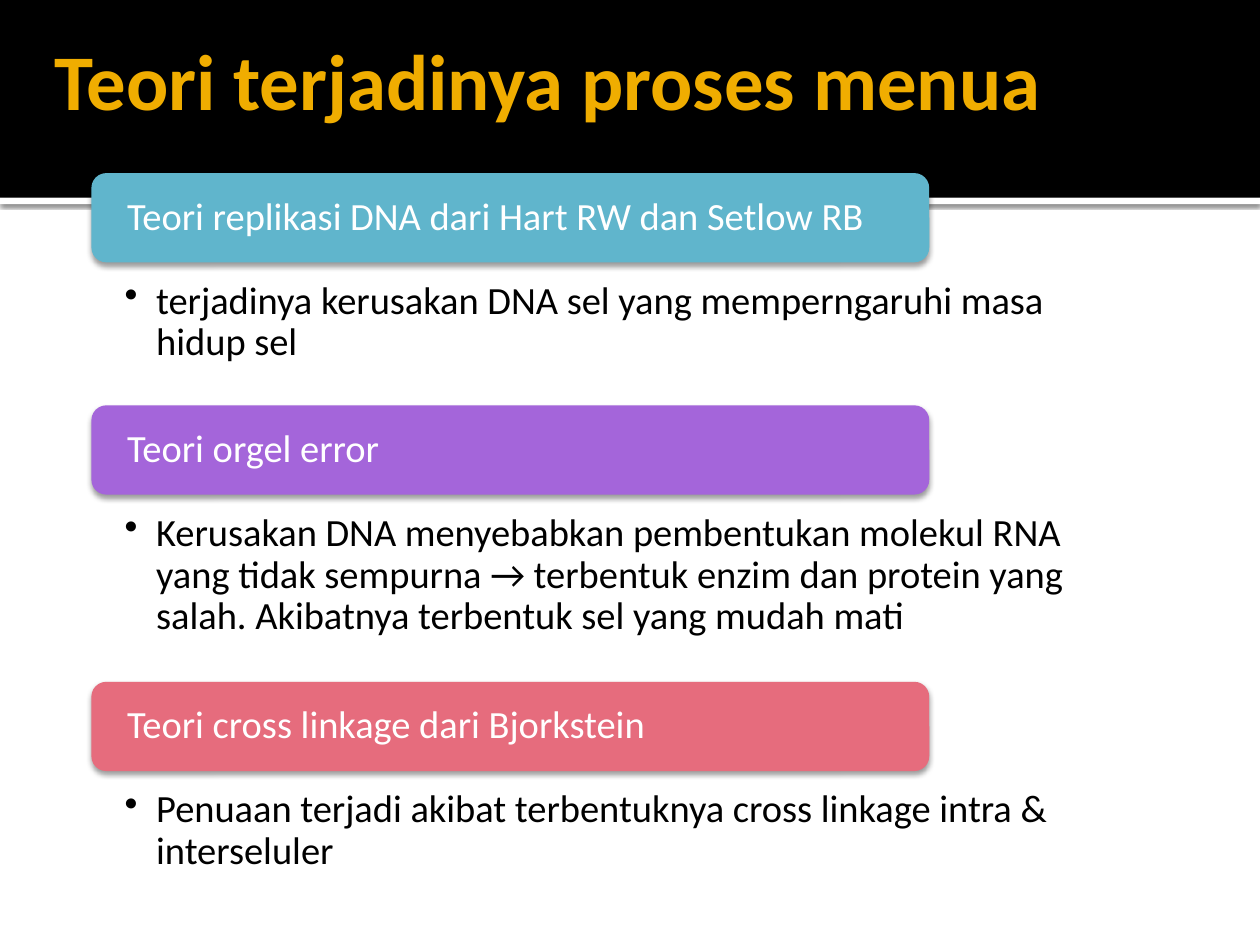
from lxml import etree
from pptx import Presentation
from pptx.dml.color import RGBColor
from pptx.enum.shapes import MSO_SHAPE
from pptx.enum.text import MSO_ANCHOR, PP_ALIGN
from pptx.oxml.ns import qn
from pptx.util import Inches, Pt

FONT = "Calibri"
COLORS = {
    "white": "FFFFFF",
    "black": "000000",
    "title": "F0AD00",
    "teal": "60B5CC",
    "purple": "A465DA",
    "rose": "E66C7D",
}
WIDTH, HEIGHT = Inches(10), Inches(7.5)
BAND_H, RULE_H = 20.93, 0.67
PANEL_X, PANEL_W, FIRST_PANEL_Y, PANEL_GAP = 2.5, 95, 23.07, 6.45
HEADER_H, HEADER_RISE = 9.45, 4.75
THEORIES = [
    ("Teori replikasi DNA dari Hart RW dan Setlow RB",
     "terjadinya kerusakan DNA sel yang memperngaruhi masa hidup sel",
     "teal", 18.13),
    ("Teori orgel error",
     "Kerusakan DNA menyebabkan pembentukan molekul RNA yang tidak sempurna → "
     "terbentuk enzim dan protein yang salah. Akibatnya terbentuk sel yang mudah mati",
     "purple", 22.8),
    ("Teori cross linkage dari Bjorkstein",
     "Penuaan terjadi akibat terbentuknya cross linkage intra & interseluler",
     "rose", 18.13),
]


def across(share):
    """Turn a percentage of the slide width into a length."""
    return int(WIDTH * share / 100)


def down(share):
    """Turn a percentage of the slide height into a length."""
    return int(HEIGHT * share / 100)


def place(box):
    """Turn a box of percentages into left, top, width and height."""
    x, y, w, h = box
    return across(x), down(y), across(w), down(h)


def add_block(s, kind, box, color):
    """Add a flat filled shape without a line."""
    sp = s.shapes.add_shape(kind, *place(box))
    sp.shadow.inherit = False
    sp.fill.solid()
    sp.fill.fore_color.rgb = RGBColor.from_string(COLORS[color])
    sp.line.fill.background()
    return sp


def add_shadow(sp, alpha, blur, dist):
    """Cast a black shadow straight down from a shape."""
    effects = sp._element.spPr.find(qn("a:effectLst"))
    shadow = etree.SubElement(effects, qn("a:outerShdw"), blurRad=str(Pt(blur)),
                              dist=str(Pt(dist)), dir="5400000",
                              algn="ctr", rotWithShape="0")
    color = etree.SubElement(shadow, qn("a:srgbClr"), val=COLORS["black"])
    etree.SubElement(color, qn("a:alpha"), val=str(alpha * 1000))


def write(sp, text, size, color, insets, anchor=MSO_ANCHOR.MIDDLE):
    """Write one left-aligned paragraph in a shape and return it."""
    tf = sp.text_frame
    tf.word_wrap = True
    tf.vertical_anchor = anchor
    tf.margin_left, tf.margin_right = (across(i) for i in insets[::2])
    tf.margin_top, tf.margin_bottom = (down(i) for i in insets[1::2])
    p = tf.paragraphs[0]
    p.text = text
    p.alignment = PP_ALIGN.LEFT
    p.font.name = FONT
    p.font.size = Pt(size)
    p.font.color.rgb = RGBColor.from_string(COLORS[color])
    return p


def add_bullet(p):
    """Give a paragraph a round bullet and a hanging indent."""
    pPr = p._p.get_or_add_pPr()
    pPr.set("marL", str(across(2.5)))
    pPr.set("indent", str(-across(2.5)))
    bullet = etree.Element(qn("a:buChar"), char="•")
    pPr.find(qn("a:defRPr")).addprevious(bullet)


def add_title_band(s, box, title):
    """Draw the dark band with its white rule and the slide title."""
    x, y, w, h = box
    rule = add_block(s, MSO_SHAPE.RECTANGLE, (x, y + h, w, RULE_H), "white")
    add_shadow(rule, 60, 2.5, 0.8)
    add_block(s, MSO_SHAPE.RECTANGLE, box, "black")
    tb = s.shapes.add_textbox(*place((x + w / 30, y, w * 0.9, h * 0.8)))
    p = write(tb, title, 45, "title", (1, 0.67, 0.5, 0.67))
    p.font.bold = True


def add_theory(s, box, name, detail, color):
    """Draw a panel of detail with its header overlapping the top edge."""
    x, y, w, h = box
    panel = add_block(s, MSO_SHAPE.RECTANGLE, box, "white")
    fill = panel._element.spPr.find(qn("a:solidFill"))
    etree.SubElement(fill[0], qn("a:alpha"), val="90000")
    p = write(panel, detail, 22, "black", (7.4, 6.67, 7.4, 2.27), MSO_ANCHOR.TOP)
    p.line_spacing = 0.9
    add_bullet(p)
    header_box = (x + w * 0.05, y - HEADER_RISE, w * 0.7, HEADER_H)
    header = add_block(s, MSO_SHAPE.ROUNDED_RECTANGLE, header_box, color)
    add_shadow(header, 38, 3.1, 2)
    p = write(header, name, 22, "white", (2.5, 0, 2.5, 0))
    p.line_spacing = 0.9


def main():
    """Build the slide and save it."""
    prs = Presentation()
    prs.slide_width, prs.slide_height = WIDTH, HEIGHT
    s = prs.slides.add_slide(prs.slide_layouts[6])
    add_title_band(s, (0, 0, 100, BAND_H), "Teori terjadinya proses menua")
    y = FIRST_PANEL_Y
    for name, detail, color, h in THEORIES:
        add_theory(s, (PANEL_X, y, PANEL_W, h), name, detail, color)
        y += h + PANEL_GAP
    prs.save("out.pptx")


if __name__ == "__main__":
    main()
